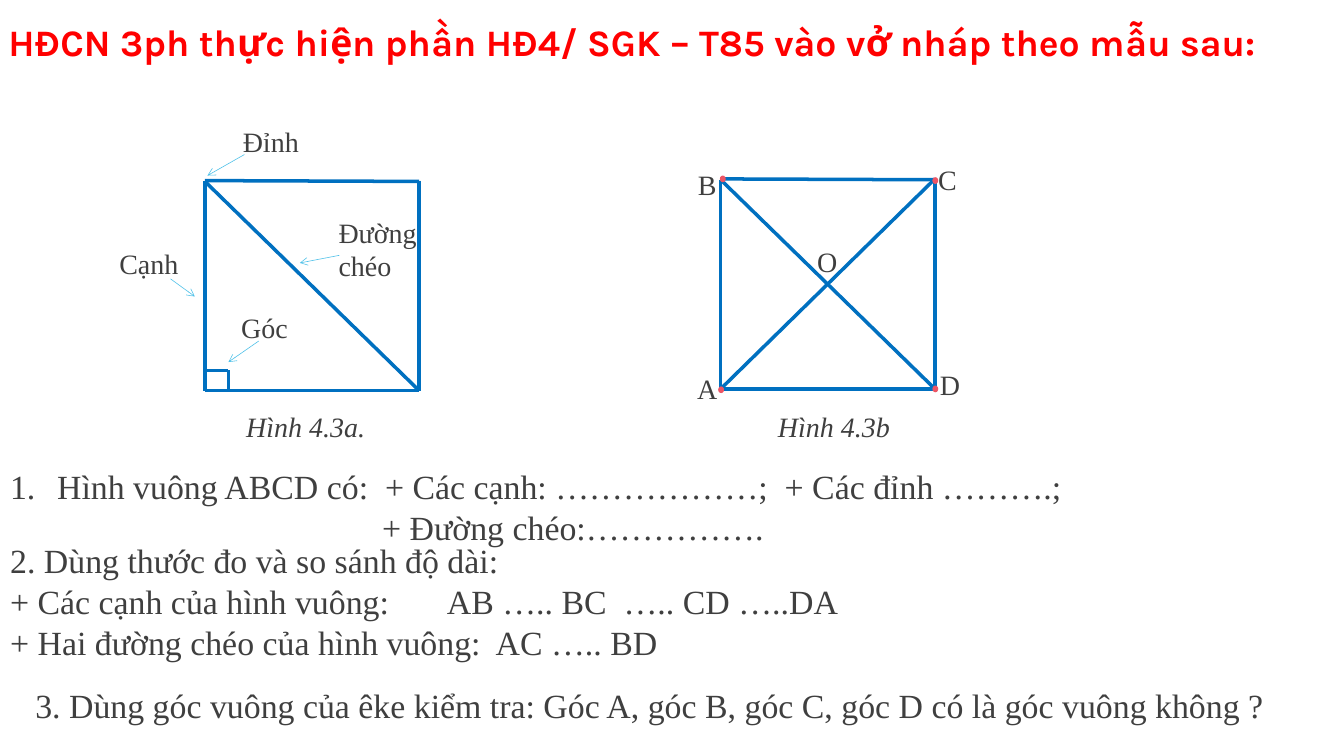
import pptx
import pptx.dml.color
import pptx.enum.shapes
import pptx.enum.text
import pptx.oxml
import pptx.oxml.ns
import pptx.util
import lxml.etree

Inches = pptx.util.Inches
qn = pptx.oxml.ns.qn
BLUE, SKY, RED, PINK, GREY = "0070C0", "4FC1E9", "FF0000", "ED5565", "3F3F3F"


def color(value):
    return pptx.dml.color.RGBColor.from_string(value)


class Board:
    font = "Times New Roman"

    def __init__(self, slide):
        self.slide = slide

    def set_text(self, shape, lines, size, ink=GREY, font=None, bold=False, italic=False, inset=(0.12, 0.06)):
        frame = shape.text_frame
        frame.word_wrap = True
        frame.vertical_anchor = pptx.enum.text.MSO_ANCHOR.TOP
        frame.margin_left = frame.margin_right = Inches(inset[0])
        frame.margin_top = frame.margin_bottom = Inches(inset[1])
        frame.text = "\n".join(lines)
        for paragraph in frame.paragraphs:
            paragraph.alignment = pptx.enum.text.PP_ALIGN.LEFT
            paragraph.font.name = font or self.font
            paragraph.font.size = pptx.util.Pt(size)
            paragraph.font.bold = bold
            paragraph.font.italic = italic
            paragraph.font.color.rgb = color(ink)
        return frame.paragraphs

    def title(self, text, left, top, width, height):
        shape = self.slide.shapes.title
        shape.left, shape.top = Inches(left), Inches(top)
        shape.width, shape.height = Inches(width), Inches(height)
        self.set_text(shape, [text], 32, RED, "Karla", bold=True, inset=(0.1, 0.05))

    def text(self, lines, left, top, width, height, size=24, **style):
        shape = self.slide.shapes.add_textbox(Inches(left), Inches(top), Inches(width), Inches(height))
        return self.set_text(shape, lines, size, **style)

    def line(self, start, end, ink=BLUE, width=3, arrow=False):
        connector = self.slide.shapes.add_connector(
            pptx.enum.shapes.MSO_CONNECTOR.STRAIGHT, *map(Inches, start + end))
        connector.line.color.rgb = color(ink)
        connector.line.width = pptx.util.Pt(width)
        properties = connector._element.spPr
        if arrow:
            lxml.etree.SubElement(properties.find(qn("a:ln")), qn("a:tailEnd"), type="arrow")
        lxml.etree.SubElement(properties, qn("a:effectLst"))

    def square(self, left, top):
        right, bottom = left + 2.55, top + 2.5
        self.line((left, top), (right, top + 0.01))
        self.line((left, top + 0.01), (left, bottom))
        self.line((left, bottom), (right, bottom))
        self.line((right, top), (right, bottom))
        self.line((left, top + 0.01), (right, bottom))

    def dot(self, left, top):
        shape = self.slide.shapes.add_shape(
            pptx.enum.shapes.MSO_SHAPE.OVAL, Inches(left), Inches(top), Inches(0.07), Inches(0.08))
        shape.shadow.inherit = False
        shape.fill.solid()
        shape.fill.fore_color.rgb = color(PINK)
        shape.line.fill.background()

    def indent(self, paragraph, left, first=0.0):
        properties = paragraph._p.get_or_add_pPr()
        properties.set("marL", str(Inches(left)))
        properties.set("indent", str(Inches(first)))
        return properties

    def number(self, paragraph, hang):
        properties = self.indent(paragraph, hang, -hang)
        bullet = pptx.oxml.parse_xml(
            f'<a:buAutoNum {pptx.oxml.ns.nsdecls("a")} type="arabicPeriod"/>')
        properties.find(qn("a:defRPr")).addprevious(bullet)

    def tab(self, paragraph, position):
        stops = pptx.oxml.parse_xml(
            f'<a:tabLst {pptx.oxml.ns.nsdecls("a")}><a:tab pos="{Inches(position)}" algn="l"/></a:tabLst>')
        paragraph._p.get_or_add_pPr().find(qn("a:defRPr")).addprevious(stops)


def main():
    presentation = pptx.Presentation()
    presentation.slide_width, presentation.slide_height = Inches(16), Inches(9)
    board = Board(presentation.slides.add_slide(presentation.slide_layouts[5]))
    board.title("HĐCN 3ph thực hiện phần HĐ4/ SGK – T85 vào vở nháp theo mẫu sau:", 0, 0.18, 16, 0.64)

    board.square(2.44, 2.15)
    board.line((2.44, 4.41), (2.72, 4.41), width=2.25)
    board.line((2.72, 4.41), (2.72, 4.65), width=2.25)
    board.square(8.58, 2.13)
    board.line((8.58, 4.63), (11.13, 2.13))

    for start, end in [((2.91, 1.84), (2.47, 2.09)), ((2.03, 3.32), (2.32, 3.53)),
                       ((4.04, 3.04), (3.57, 3.13)), ((3.08, 4.06), (2.72, 4.31))]:
        board.line(start, end, SKY, 0.5, arrow=True)
    for part, left, top, height in [("Đỉnh", 2.77, 1.42, 0.53), ("Đường chéo", 3.91, 2.5, 0.93),
                                    ("Cạnh", 1.3, 2.87, 0.53), ("Góc", 2.75, 3.64, 0.53)]:
        board.text([part], left, top, 1.18, height)
    for point, left, top in [("A", 8.2, 4.37), ("B", 8.21, 1.94), ("C", 11.07, 1.88),
                             ("D", 11.09, 4.33), ("O", 9.63, 2.86)]:
        board.text([point], left, top, 0.59, 0.5, inset=(0.1, 0.05))
    for caption, left in [("Hình 4.3a.", 2.81), ("Hình 4.3b", 9.14)]:
        board.text([caption], left, 4.82, 2.31, 0.53, italic=True)
    for left, top in [(8.55, 4.6), (11.1, 4.59), (8.57, 2.09), (11.1, 2.11)]:
        board.dot(left, top)

    elements, diagonals = board.text(
        ["Hình vuông ABCD có:  + Các cạnh: ………………;  + Các đỉnh ……….;", "+ Đường chéo:……………."],
        0, 5.49, 16, 1.1, 29)
    board.number(elements, 0.56)
    board.indent(diagonals, 4.43)
    lengths = board.text(
        ["2. Dùng thước đo và so sánh độ dài:",
         "+ Các cạnh của hình vuông:\tAB ….. BC  ….. CD …..DA",
         "+ Hai đường chéo của hình vuông:  AC ….. BD"],
        0, 6.37, 14.89, 1.59, 29)
    board.tab(lengths[1], 5.2)
    board.text(["3. Dùng góc vuông của êke kiểm tra: Góc A, góc B, góc C, góc D có là góc vuông không ?"],
               0.3, 8.09, 15.7, 0.61, 29)
    presentation.save("out.pptx")


if __name__ == "__main__":
    main()
